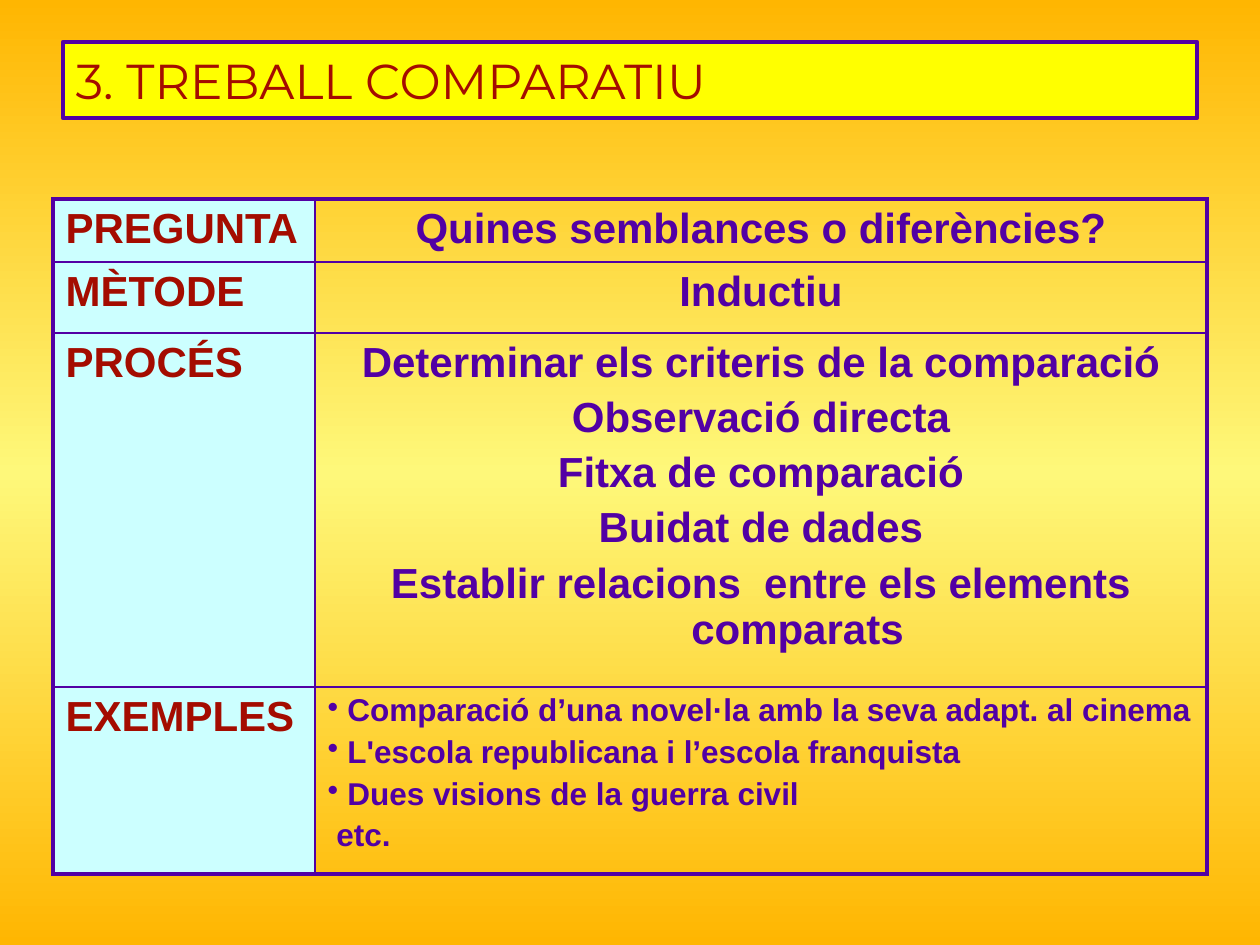
"""Build the slide on comparative work: a title bar over a four-row table."""
from copy import deepcopy
from dataclasses import dataclass

from lxml import etree
from pptx import Presentation
from pptx import util as u
from pptx.dml.color import RGBColor
from pptx.enum import text
from pptx.oxml.ns import qn

PX = u.Inches(1) / 126


@dataclass(frozen=True)
class Theme:
    violet: str = "5200A4"
    red: str = "A40C00"
    yellow: str = "FFFF00"
    cyan: str = "CCFFFF"
    sky: tuple = ((0, "FFB601"), (0.5, "FEF87A"), (1, "FFB601"))
    title_font: str = "Montserrat"
    body_font: str = "Arial"
    title_size: int = 28
    body_size: int = 24
    small_size: int = 18
    outer: float = 2.25
    inner: float = 1
    title_line: float = 2.5


T = Theme()
COLS = (262, 892)
ROWS = (
    ("PREGUNTA", 63, ["Quines semblances o diferències?"], {}),
    ("MÈTODE", 71, ["Inductiu"], {}),
    ("PROCÉS", 354, [
        "Determinar els criteris de la comparació",
        "Observació directa",
        "Fitxa de comparació",
        "Buidat de dades",
        "Establir relacions  entre els elements comparats",
    ], {"margin": 73, "indent": -73}),
    ("EXEMPLES", 187, [
        "• Comparació d’una novel·la amb la seva adapt. al cinema",
        "• L'escola republicana i l’escola franquista",
        "• Dues visions de la guerra civil",
        " etc.",
    ], {"size": T.small_size, "align": text.PP_ALIGN.JUSTIFY, "indent": -15}),
)


def px(n):
    return u.Emu(round(n * PX))


def rgb(value):
    return RGBColor.from_string(value)


def put(obj, values):
    for name, value in values.items():
        setattr(obj, name, value)


def paint(fill, color):
    fill.solid()
    fill.fore_color.rgb = rgb(color)


def add_background(s):
    fill = s.background.fill
    fill.gradient()
    fill.gradient_angle = 270
    stops = s.element.find(".//" + qn("a:gsLst"))
    stops.append(deepcopy(stops[0]))
    for stop, (position, color) in zip(fill.gradient_stops, T.sky):
        stop.position = position
        stop.color.rgb = rgb(color)


def write(p, words, font, size, color, bold, align):
    p.alignment = align
    r = p.add_run()
    r.text = words
    put(r.font, {"name": font, "size": u.Pt(size), "bold": bold})
    r.font.color.rgb = rgb(color)


def add_title(s, words):
    sp = s.shapes.title
    put(sp, {"left": px(63), "top": px(42), "width": px(1134), "height": px(76)})
    paint(sp.fill, T.yellow)
    sp.line.color.rgb = rgb(T.violet)
    sp.line.width = u.Pt(T.title_line)
    tf = sp.text_frame
    put(tf, {"word_wrap": True, "auto_size": text.MSO_AUTO_SIZE.NONE,
             "vertical_anchor": text.MSO_ANCHOR.MIDDLE})
    write(tf.paragraphs[0], words, T.title_font, T.title_size, T.red, False,
          text.PP_ALIGN.LEFT)


def set_indent(p, margin, indent, bullet):
    pr = p._p.get_or_add_pPr()
    pr.set("marL", str(px(margin)))
    pr.set("indent", str(px(indent)))
    if bullet:
        color = etree.SubElement(pr, qn("a:buClr"))
        etree.SubElement(color, qn("a:srgbClr"), val=T.violet)
        etree.SubElement(pr, qn("a:buChar"), char="•")


def set_borders(cell, outer_sides):
    pr = cell._tc.get_or_add_tcPr()
    for side in "LRTB":
        width = T.outer if side in outer_sides else T.inner
        ln = etree.SubElement(pr, qn("a:ln" + side), w=str(u.Pt(width)))
        fill = etree.SubElement(ln, qn("a:solidFill"))
        etree.SubElement(fill, qn("a:srgbClr"), val=T.violet)


def fill_label(cell, words):
    paint(cell.fill, T.cyan)
    write(cell.text_frame.paragraphs[0], words, T.body_font, T.body_size, T.red,
          True, text.PP_ALIGN.LEFT)


def fill_content(cell, lines, size=T.body_size, align=text.PP_ALIGN.CENTER,
                 margin=0, indent=0):
    cell.fill.background()
    tf = cell.text_frame
    for i, line in enumerate(lines):
        p = tf.add_paragraph() if i else tf.paragraphs[0]
        if i:
            p.space_before = u.Pt(size * 0.2)
        bullet = line.startswith("•")
        write(p, line.removeprefix("•"), T.body_font, size, T.violet, True, align)
        if bullet or margin:
            set_indent(p, margin, indent, bullet)


def add_table(s):
    height = sum(row[1] for row in ROWS)
    frame = s.shapes.add_table(len(ROWS), len(COLS), px(53), px(199),
                               px(sum(COLS)), px(height))
    table = frame.table
    put(table, {"first_row": False, "horz_banding": False})
    for column, width in zip(table.columns, COLS):
        column.width = px(width)
    for i, (label, row_height, lines, style) in enumerate(ROWS):
        table.rows[i].height = px(row_height)
        ends = ("T" if i == 0 else "") + ("B" if i == len(ROWS) - 1 else "")
        for j, side in enumerate("LR"):
            set_borders(table.cell(i, j), side + ends)
        fill_label(table.cell(i, 0), label)
        fill_content(table.cell(i, 1), lines, **style)


def main():
    prs = Presentation()
    put(prs, {"slide_width": px(1260), "slide_height": px(945)})
    s = prs.slides.add_slide(prs.slide_layouts[5])
    add_background(s)
    add_title(s, "3. TREBALL COMPARATIU")
    add_table(s)
    prs.save("out.pptx")


if __name__ == "__main__":
    main()
